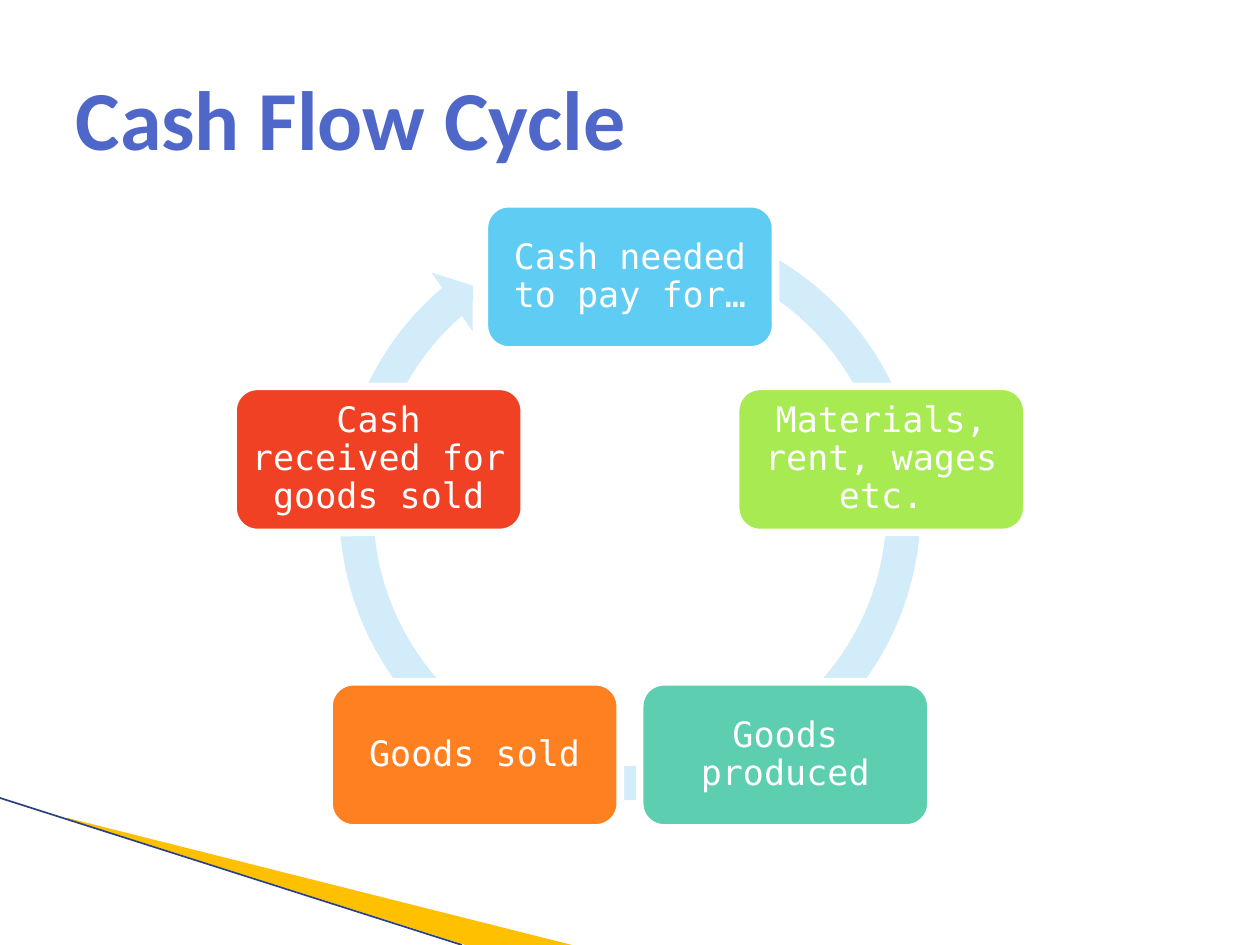
from math import cos, radians, sin

from lxml import etree
from pptx import Presentation
from pptx.dml.color import RGBColor
from pptx.enum.shapes import MSO_CONNECTOR, MSO_SHAPE
from pptx.enum.text import MSO_ANCHOR, MSO_AUTO_SIZE, PP_ALIGN
from pptx.oxml.ns import qn
from pptx.util import Pt

STRAIGHT = MSO_CONNECTOR.STRAIGHT
CIRCULAR_ARROW = MSO_SHAPE.CIRCULAR_ARROW
ROUNDED = MSO_SHAPE.ROUNDED_RECTANGLE
MIDDLE = MSO_ANCHOR.MIDDLE
NO_AUTOFIT = MSO_AUTO_SIZE.NONE
LEFT, CENTER = PP_ALIGN.LEFT, PP_ALIGN.CENTER

THEME = {
    "title": {"name": "Calibri", "size": Pt(48), "bold": True},
    "step": {"name": "DejaVu Sans Mono", "size": Pt(20), "bold": False},
    "title_color": RGBColor.from_string("4E67C8"),
    "white": RGBColor.from_string("FFFFFF"),
    "ring": RGBColor.from_string("D2ECFA"),
    "wedge": RGBColor.from_string("FFC000"),
    "edge": RGBColor.from_string("2A4080"),
}

STEPS = [
    ("Cash needed to pay for…", "5ECCF3"),
    ("Materials, rent, wages etc.", "A7EA52"),
    ("Goods produced", "5DCEAF"),
    ("Goods sold", "FF8021"),
    ("Cash received for goods sold", "F14124"),
]
CENTER_X, CENTER_Y, RADIUS = 360, 309.2, 151
STEP_WIDTH, STEP_HEIGHT = 166.4, 83.5


def format_text(frame, text, alignment, font_values, color):
    frame.text = text
    frame.word_wrap = True
    frame.auto_size = NO_AUTOFIT
    frame.vertical_anchor = MIDDLE
    paragraph = frame.paragraphs[0]
    paragraph.alignment = alignment
    font = paragraph.runs[0].font
    for attribute, value in font_values.items():
        setattr(font, attribute, value)
    font.color.rgb = color
    return paragraph


def fill_shape(shape, color):
    shape.shadow.inherit = False
    shape.fill.solid()
    shape.fill.fore_color.rgb = color
    shape.line.fill.background()


presentation = Presentation()
presentation.slide_width, presentation.slide_height = Pt(720), Pt(540)
slide = presentation.slides.add_slide(presentation.slide_layouts[5])
shapes = slide.shapes

title = shapes.title
title.left, title.top, title.width, title.height = Pt(36), Pt(21.6), Pt(648), Pt(90)
format_text(title.text_frame, "Cash Flow Cycle", LEFT, THEME["title"], THEME["title_color"])

builder = shapes.build_freeform(Pt(38.2), Pt(467.3))
builder.add_line_segments([(Pt(327), Pt(540)), (Pt(266), Pt(540)), (Pt(39), Pt(468))])
fill_shape(builder.convert_to_shape(), THEME["wedge"])

edge = shapes.add_connector(STRAIGHT, Pt(0), Pt(456), Pt(264), Pt(540))
edge.line.color.rgb = THEME["edge"]
edge.line.width = Pt(0.95)
etree.SubElement(edge.line._get_or_add_ln().getparent(), qn("a:effectLst"))

ring = shapes.add_shape(CIRCULAR_ARROW, Pt(183.2), Pt(114.4), Pt(353.6), Pt(353.6))
for index, value in enumerate([0.055, 3.307, 137.657, 173.922, 0.058]):
    ring.adjustments[index] = value
fill_shape(ring, THEME["ring"])

for index, (text, color) in enumerate(STEPS):
    angle = radians(index * 360 / len(STEPS))
    left = CENTER_X + RADIUS * sin(angle) - STEP_WIDTH / 2
    top = CENTER_Y - RADIUS * cos(angle) - STEP_HEIGHT / 2
    step = shapes.add_shape(ROUNDED, Pt(left), Pt(top), Pt(STEP_WIDTH), Pt(STEP_HEIGHT))
    fill_shape(step, RGBColor.from_string(color))
    step.line.color.rgb = THEME["white"]
    step.line.width = Pt(4.33)
    for side in ("left", "top", "right", "bottom"):
        setattr(step.text_frame, f"margin_{side}", Pt(5.76))
    paragraph = format_text(step.text_frame, text, CENTER, THEME["step"], THEME["white"])
    paragraph.line_spacing = 0.9

presentation.save("out.pptx")
